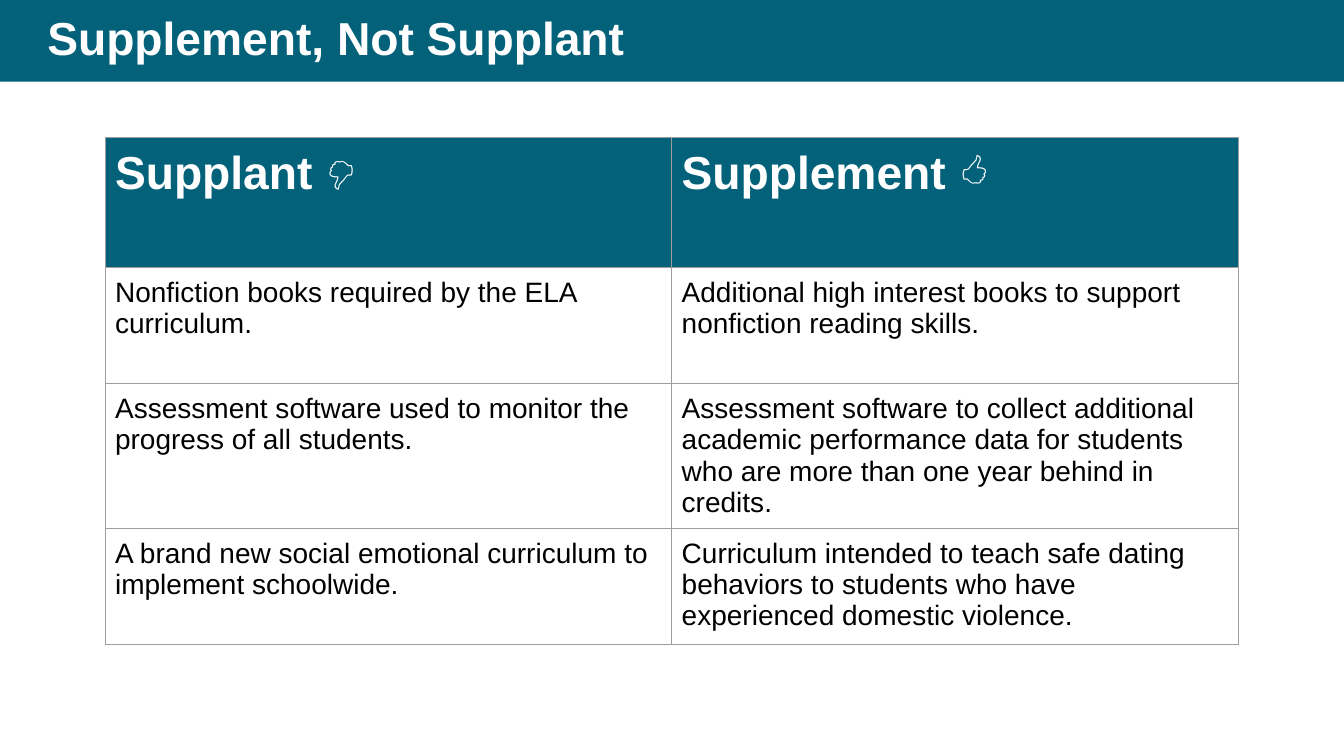
"""Build the slide that contrasts supplanting with supplementing."""
from dataclasses import dataclass

import lxml.etree
import pptx
import pptx.dml.color
import pptx.enum.shapes
import pptx.enum.text
import pptx.oxml.ns
import pptx.util

Cm = pptx.util.Cm
COLORS = {"teal": "03617A", "white": "FFFFFF", "black": "000000", "border": "9E9E9E"}
FONT = "Arial"
HEADING_SIZE = 33
EXAMPLE_SIZE = 20
CELL_MARGIN = Cm(0.25)
COLUMN_WIDTH = Cm(14.28)
HEADING_HEIGHT = Cm(3.28)
EXAMPLE_HEIGHT = Cm(2.92)
BANNER_HEIGHT = Cm(2.06)


@dataclass(frozen=True)
class Practice:
    """One column: a heading with its thumb symbol, then examples."""

    heading: str
    thumb: str
    examples: tuple[str, ...]


PRACTICES = (
    Practice("Supplant ", "🖓", (
        "Nonfiction books required by the ELA curriculum.",
        "Assessment software used to monitor the progress of all students.",
        "A brand new social emotional curriculum to implement schoolwide.",
    )),
    Practice("Supplement ", "🖒", (
        "Additional high interest books to support nonfiction reading skills.",
        "Assessment software to collect additional academic performance data "
        "for students who are more than one year behind in credits.",
        "Curriculum intended to teach safe dating behaviors to students who "
        "have experienced domestic violence.",
    )),
)


def rgb(name: str) -> pptx.dml.color.RGBColor:
    """Return the named colour."""
    return pptx.dml.color.RGBColor.from_string(COLORS[name])


def add_run(paragraph, text: str, size: int, color: str, bold: bool = False) -> None:
    """Append a formatted run to a paragraph."""
    run = paragraph.add_run()
    run.text = text
    run.font.name = FONT
    run.font.size = pptx.util.Pt(size)
    run.font.bold = bold
    run.font.color.rgb = rgb(color)


def add_borders(cell) -> None:
    """Draw a thin line on each side of a table cell."""
    qn = pptx.oxml.ns.qn
    properties = cell._tc.get_or_add_tcPr()
    for side in ("lnL", "lnR", "lnT", "lnB"):
        line = lxml.etree.SubElement(properties, qn(f"a:{side}"), w=str(pptx.util.Pt(0.75)))
        fill = lxml.etree.SubElement(line, qn("a:solidFill"))
        lxml.etree.SubElement(fill, qn("a:srgbClr"), val=COLORS["border"])


def prepare_cell(cell, fill: str | None = None):
    """Set margins, borders and fill of a cell and return its paragraph."""
    cell.margin_left = cell.margin_right = CELL_MARGIN
    cell.margin_top = cell.margin_bottom = CELL_MARGIN
    add_borders(cell)
    if fill:
        cell.fill.solid()
        cell.fill.fore_color.rgb = rgb(fill)
    else:
        cell.fill.background()
    return cell.text_frame.paragraphs[0]


def add_title(slide, slide_width: int) -> None:
    """Place the title on a banner across the top."""
    banner = slide.shapes.add_shape(
        pptx.enum.shapes.MSO_SHAPE.RECTANGLE, 0, 0, slide_width, BANNER_HEIGHT)
    banner.shadow.inherit = False
    banner.fill.solid()
    banner.fill.fore_color.rgb = rgb("teal")
    banner.line.fill.background()

    title = slide.shapes.title
    title.element.addprevious(banner.element)
    title.left, title.top, title.width, title.height = Cm(0.94), 0, Cm(31.29), BANNER_HEIGHT
    frame = title.text_frame
    frame.auto_size = pptx.enum.text.MSO_AUTO_SIZE.NONE
    frame.vertical_anchor = pptx.enum.text.MSO_ANCHOR.MIDDLE
    paragraph = frame.paragraphs[0]
    paragraph.alignment = pptx.enum.text.PP_ALIGN.LEFT
    paragraph.line_spacing = 0.9
    add_run(paragraph, "Supplement, Not Supplant", HEADING_SIZE, "white", bold=True)


def add_comparison(slide, practices: tuple[Practice, ...]) -> None:
    """Add the table with one column for each practice."""
    example_count = len(practices[0].examples)
    comparison = slide.shapes.add_table(
        example_count + 1, len(practices), Cm(2.65), Cm(3.46),
        COLUMN_WIDTH * len(practices),
        HEADING_HEIGHT + EXAMPLE_HEIGHT * example_count).table
    for index, row in enumerate(comparison.rows):
        row.height = EXAMPLE_HEIGHT if index else HEADING_HEIGHT
    for column, practice in enumerate(practices):
        comparison.columns[column].width = COLUMN_WIDTH
        heading = prepare_cell(comparison.cell(0, column), "teal")
        add_run(heading, practice.heading, HEADING_SIZE, "white", bold=True)
        add_run(heading, practice.thumb, HEADING_SIZE, "white")
        for row, example in enumerate(practice.examples, start=1):
            paragraph = prepare_cell(comparison.cell(row, column))
            add_run(paragraph, example, EXAMPLE_SIZE, "black")


def main() -> None:
    """Create and save the presentation."""
    presentation = pptx.Presentation()
    presentation.slide_width = Cm(33.87)
    presentation.slide_height = Cm(19.05)
    slide = presentation.slides.add_slide(presentation.slide_layouts.get_by_name("Title Only"))
    add_title(slide, presentation.slide_width)
    add_comparison(slide, PRACTICES)
    presentation.save("out.pptx")


if __name__ == "__main__":
    main()
